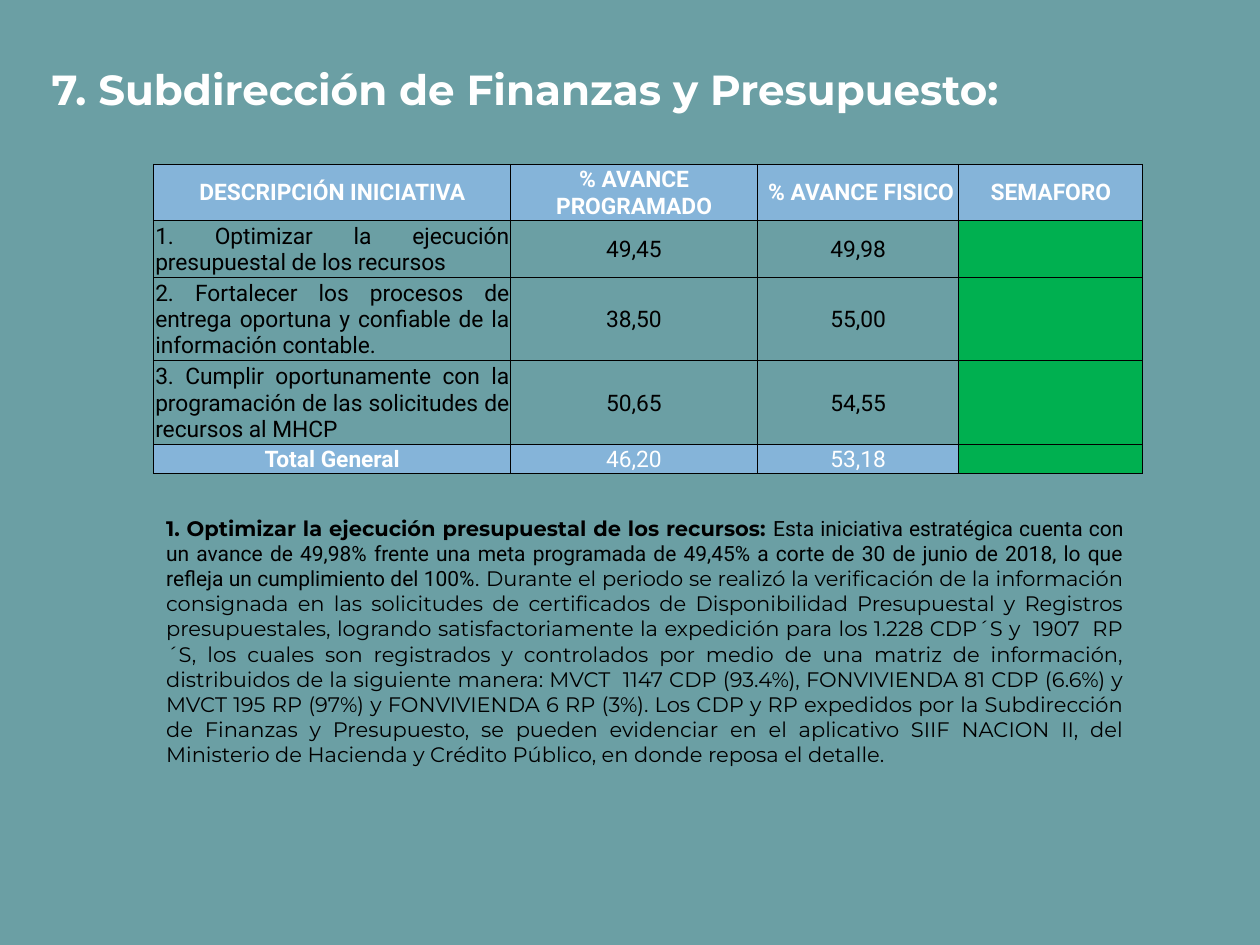
from dataclasses import dataclass

import pptx
import pptx.dml.color
import pptx.enum.text
import pptx.oxml
import pptx.oxml.ns
import pptx.util

Cm = pptx.util.Cm
Pt = pptx.util.Pt
ALIGN = pptx.enum.text.PP_ALIGN
ANCHOR = pptx.enum.text.MSO_ANCHOR

WHITE, BLACK = "FFFFFF", "000000"
TEAL, BLUE, GREEN = "6B9FA4", "85B4D9", "00B050"
HEAD_FONT, BODY_FONT = "Montserrat", "Roboto"


@dataclass
class Run:
    text: str
    size: float
    font: str
    color: str = BLACK
    bold: bool = False


@dataclass
class Row:
    height: float
    label: str
    values: tuple[str, ...]
    total: bool = False


HEADERS = ("DESCRIPCIÓN INICIATIVA", "% AVANCE PROGRAMADO", " % AVANCE FISICO", "SEMAFORO")
COL_WIDTHS = (7.19, 4.98, 4.06, 3.71)
HEADER_HEIGHT = 1.14
ROWS = (
    Row(1.14, "1. Optimizar la ejecución presupuestal de los recursos", ("49,45", "49,98")),
    Row(1.67, "2. Fortalecer los procesos de entrega oportuna y confiable de la "
        "información contable.", ("38,50", "55,00")),
    Row(1.67, "3. Cumplir oportunamente con la programación de las solicitudes de "
        "recursos al MHCP", ("50,65", "54,55")),
    Row(0.58, "Total General", ("46,20", "53,18"), total=True),
)
TITLE = Run("7. Subdirección de Finanzas y Presupuesto:", 24, HEAD_FONT, WHITE, True)
DETAIL = (
    Run("1. Optimizar la ejecución presupuestal de los recursos: ", 12, HEAD_FONT, bold=True),
    Run("Esta iniciativa estratégica cuenta con un avance de 49,98% frente una meta "
        "programada de 49,45% a corte de 30 de junio de 2018, lo que refleja un "
        "cumplimiento del 100%. ", 12, BODY_FONT),
    Run("Durante el periodo se realizó la verificación de la información consignada en "
        "las solicitudes de certificados de Disponibilidad Presupuestal y Registros "
        "presupuestales, logrando satisfactoriamente la expedición para los 1.228 CDP´S "
        "y  1907  RP´S, los cuales son registrados y controlados por medio de una matriz "
        "de información, distribuidos de la siguiente manera: MVCT  1147 CDP (93.4%), "
        "FONVIVIENDA 81 CDP (6.6%) y MVCT 195 RP (97%) y FONVIVIENDA 6 RP (3%). Los CDP "
        "y RP expedidos por la Subdirección de Finanzas y Presupuesto, se pueden "
        "evidenciar en el aplicativo SIIF NACION II, del Ministerio de Hacienda y "
        "Crédito Público, en donde reposa el detalle.", 12, HEAD_FONT),
)


def rgb(value: str) -> pptx.dml.color.RGBColor:
    return pptx.dml.color.RGBColor.from_string(value)


def add_run(p, run: Run) -> None:
    r = p.add_run()
    r.text = run.text
    r.font.size = Pt(run.size)
    r.font.name = run.font
    r.font.bold = run.bold
    r.font.color.rgb = rgb(run.color)


def add_text(s, box: tuple[float, ...], runs: tuple[Run, ...], align, anchor):
    sp = s.shapes.add_textbox(*map(Cm, box))
    tf = sp.text_frame
    tf.word_wrap = True
    tf.vertical_anchor = anchor
    p = tf.paragraphs[0]
    p.alignment = align
    for run in runs:
        add_run(p, run)
    return tf


def add_borders(cell) -> None:
    tc_pr = cell._tc.get_or_add_tcPr()
    for i, side in enumerate(("lnL", "lnR", "lnT", "lnB")):
        tc_pr.insert(i, pptx.oxml.parse_xml(
            f'<a:{side} {pptx.oxml.ns.nsdecls("a")} w="{Pt(0.5)}">'
            f'<a:solidFill><a:srgbClr val="{BLACK}"/></a:solidFill></a:{side}>'))


def fill_cell(cell, fill: str | None, run: Run | None = None, align=ALIGN.CENTER) -> None:
    cell.margin_left = cell.margin_right = cell.margin_top = Cm(0.03)
    cell.margin_bottom = 0
    cell.vertical_anchor = ANCHOR.MIDDLE
    if fill:
        cell.fill.solid()
        cell.fill.fore_color.rgb = rgb(fill)
    else:
        cell.fill.background()
    add_borders(cell)
    p = cell.text_frame.paragraphs[0]
    p.alignment = align
    if run:
        add_run(p, run)
    else:
        p._p.get_or_add_endParaRPr().set("sz", "1200")


def add_progress_table(s) -> None:
    heights = (HEADER_HEIGHT, *(row.height for row in ROWS))
    frame = s.shapes.add_table(len(heights), len(HEADERS), Cm(3.1), Cm(3.31),
                               Cm(sum(COL_WIDTHS)), Cm(sum(heights)))
    table = frame.table
    table.horz_banding = False
    for col, width in zip(table.columns, COL_WIDTHS):
        col.width = Cm(width)
    for row, height in zip(table.rows, heights):
        row.height = Cm(height)
    for c, text in enumerate(HEADERS):
        fill_cell(table.cell(0, c), BLUE, Run(text, 13, BODY_FONT, WHITE, True))
    for i, row in enumerate(ROWS, start=1):
        fill = BLUE if row.total else None
        color = WHITE if row.total else BLACK
        align = ALIGN.CENTER if row.total else ALIGN.JUSTIFY
        fill_cell(table.cell(i, 0), fill, Run(row.label, 13, BODY_FONT, color, row.total), align)
        for c, value in enumerate(row.values, start=1):
            fill_cell(table.cell(i, c), fill, Run(value, 13, BODY_FONT, color))
        fill_cell(table.cell(i, len(HEADERS) - 1), GREEN)


def main() -> None:
    prs = pptx.Presentation()
    prs.slide_width, prs.slide_height = Cm(25.4), Cm(19.05)
    s = prs.slides.add_slide(prs.slide_layouts[6])
    s.background.fill.solid()
    s.background.fill.fore_color.rgb = rgb(TEAL)
    tf = add_text(s, (0.79, 0.58, 24.61, 1.96), (TITLE,), ALIGN.LEFT, ANCHOR.BOTTOM)
    tf.margin_top = tf.margin_bottom = Cm(0.25)
    add_text(s, (3.1, 10.26, 19.81, 5.38), DETAIL, ALIGN.JUSTIFY, ANCHOR.TOP)
    add_progress_table(s)
    prs.save("out.pptx")


if __name__ == "__main__":
    main()
